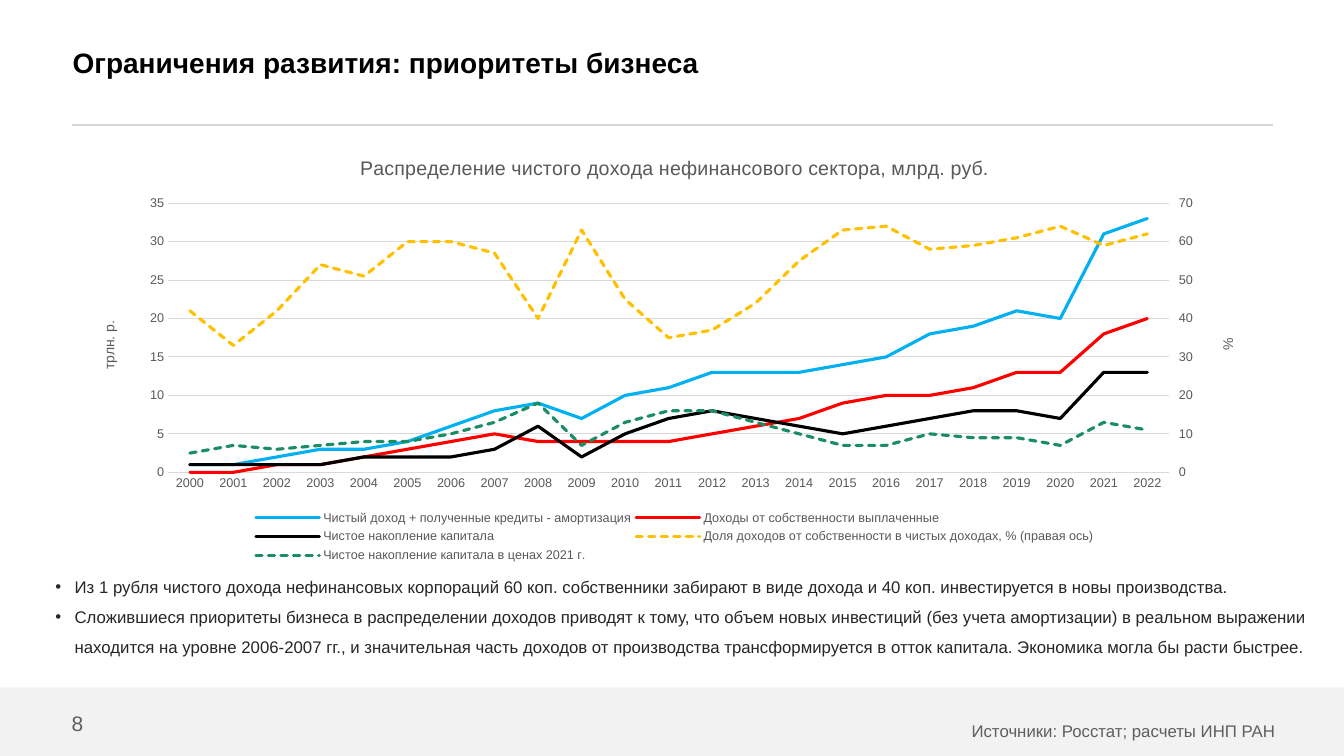
from copy import deepcopy

from lxml import etree
from pptx import Presentation
from pptx.chart import axis as axes, data
from pptx.dml import color
from pptx.enum import chart as charts, dml, shapes, text
from pptx.oxml import ns
from pptx.util import Inches, Pt

FONT = "Arial"
GREY, PALE = "595959", "D9D9D9"
BULLETS = [
    "Из 1 рубля чистого дохода нефинансовых корпораций 60 коп. собственники забирают в виде дохода "
    "и 40 коп. инвестируется в новы производства.",
    "Сложившиеся приоритеты бизнеса в распределении доходов приводят к тому, что объем новых инвестиций "
    "(без учета амортизации) в реальном выражении находится на уровне 2006-2007 гг., и значительная часть "
    "доходов от производства трансформируется в отток капитала. Экономика могла бы расти быстрее.",
]
LEFT_SERIES = [
    ("Чистый доход + полученные кредиты - амортизация", "00B0F0",
     [1, 1, 2, 3, 3, 4, 6, 8, 9, 7, 10, 11, 13, 13, 13, 14, 15, 18, 19, 21, 20, 31, 33]),
    ("Доходы от собственности выплаченные", "FF0000",
     [0, 0, 1, 1, 2, 3, 4, 5, 4, 4, 4, 4, 5, 6, 7, 9, 10, 10, 11, 13, 13, 18, 20]),
    ("Чистое накопление капитала", "000000",
     [1, 1, 1, 1, 2, 2, 2, 3, 6, 2, 5, 7, 8, 7, 6, 5, 6, 7, 8, 8, 7, 13, 13]),
]
RIGHT_SERIES = [
    ("Доля доходов от собственности в чистых доходах, % (правая ось)", "FFC000",
     [42, 33, 42, 54, 51, 60, 60, 57, 40, 63, 45, 35, 37, 44, 55, 63, 64, 58, 59, 61, 64, 59, 62]),
    ("Чистое накопление капитала в ценах 2021 г.", "1B8D64",
     [5, 7, 6, 7, 8, 8, 10, 13, 18, 7, 13, 16, 16, 13, 10, 7, 7, 10, 9, 9, 7, 13, 11]),
]


def rgb(value):
    return color.RGBColor.from_string(value)


def style_font(font, size, shade, bold=False):
    font.name, font.size, font.bold = FONT, Pt(size), bold
    font.color.rgb = rgb(shade)


def add_bullet(para):
    properties = para._p.get_or_add_pPr()
    properties.set("marL", str(Inches(0.19)))
    properties.set("indent", str(-Inches(0.19)))
    etree.SubElement(properties, ns.qn("a:buFont")).set("typeface", FONT)
    etree.SubElement(properties, ns.qn("a:buChar")).set("char", "•")


def add_text(page, place, lines, size, shade, bold=False, align=text.PP_ALIGN.LEFT,
             anchor=text.MSO_ANCHOR.TOP, spacing=1.0, bullet=False, wrap=True):
    frame = page.shapes.add_textbox(*map(Inches, place)).text_frame
    frame.word_wrap, frame.vertical_anchor = wrap, anchor
    frame.margin_left = frame.margin_right = frame.margin_top = frame.margin_bottom = 0
    for index, line in enumerate(lines):
        para = frame.add_paragraph() if index else frame.paragraphs[0]
        if bullet:
            add_bullet(para)
        para.alignment, para.line_spacing = align, spacing
        span = para.add_run()
        span.text = line
        style_font(span.font, size, shade, bold)


def add_rule(page, left, right, top):
    rule = page.shapes.add_connector(shapes.MSO_CONNECTOR.STRAIGHT, *map(Inches, (left, top, right, top)))
    rule.line.color.rgb, rule.line.width = rgb("D5D5D5"), Pt(1.5)
    etree.SubElement(rule._element.spPr, ns.qn("a:effectLst"))


def add_band(page, place, fill):
    band = page.shapes.add_shape(shapes.MSO_SHAPE.RECTANGLE, *map(Inches, place))
    band.shadow.inherit = False
    band.fill.solid()
    band.fill.fore_color.rgb = rgb(fill)
    band.line.fill.background()


def set_layout(element, left, top, width=None, height=None, inner=False):
    for old in element.findall(ns.qn("c:layout")):
        element.remove(old)
    layout = etree.Element(ns.qn("c:layout"))
    manual = etree.SubElement(layout, ns.qn("c:manualLayout"))
    settings = [("layoutTarget", "inner" if inner else None), ("xMode", "edge"), ("yMode", "edge"),
                ("x", left), ("y", top), ("w", width), ("h", height)]
    for tag, value in settings:
        if value is not None:
            etree.SubElement(manual, ns.qn("c:" + tag)).set("val", str(value))
    overlay = element.find(ns.qn("c:overlay"))
    if overlay is None:
        element.insert(0, layout)
    else:
        overlay.addprevious(layout)


def set_title(title, words, size, left, top, upright=True):
    frame = title.text_frame
    span = frame.paragraphs[0].add_run()
    span.text = words
    style_font(span.font, size, GREY)
    if not upright:
        body = next(title._element.iter(ns.qn("a:bodyPr")))
        body.set("rot", "-5400000")
        body.set("vert", "horz")
    set_layout(title._element, left, top)


def style_value_axis(axis, top, step, tick):
    axis.minimum_scale, axis.maximum_scale, axis.major_unit = 0, top, step
    axis.major_tick_mark = tick
    axis.tick_labels.number_format = "0"
    axis.tick_labels.number_format_is_linked = False
    style_font(axis.tick_labels.font, 9, GREY)
    axis.format.line.fill.background()


def style_series(series, shade, dashed):
    series.smooth = False
    series.marker.style = charts.XL_MARKER_STYLE.NONE
    line = series.format.line
    line.color.rgb, line.width = rgb(shade), Pt(2.25)
    if dashed:
        line.dash_style = dml.MSO_LINE.SQUARE_DOT
    next(series._element.iter(ns.qn("a:ln"))).set("cap", "rnd")


def add_right_axis(chart):
    area = chart._chartSpace.chart.plotArea
    left_plot = area.find(ns.qn("c:lineChart"))
    right_plot = deepcopy(left_plot)
    left_plot.addnext(right_plot)
    count = len(LEFT_SERIES)
    for plot, extra in ((left_plot, slice(count, None)), (right_plot, slice(0, count))):
        for series in plot.findall(ns.qn("c:ser"))[extra]:
            plot.remove(series)
    category = deepcopy(area.find(ns.qn("c:catAx")))
    value = deepcopy(area.find(ns.qn("c:valAx")))
    area.find(ns.qn("c:valAx")).addnext(value)
    value.addnext(category)
    renamed = {category.find(ns.qn("c:axId")).get("val"): "5001",
               value.find(ns.qn("c:axId")).get("val"): "5002"}
    for element in (right_plot, category, value):
        for tag in ("c:axId", "c:crossAx"):
            for link in element.findall(ns.qn(tag)):
                link.set("val", renamed[link.get("val")])
    axes.CategoryAxis(category).visible = False
    value.find(ns.qn("c:axPos")).set("val", "r")
    value.find(ns.qn("c:crosses")).set("val", "max")
    right = axes.ValueAxis(value)
    right.has_major_gridlines = False
    style_value_axis(right, 70, 10, charts.XL_TICK_MARK.OUTSIDE)
    return right


def add_income_chart(page):
    source = data.CategoryChartData(number_format="0")
    source.categories = [str(year) for year in range(2000, 2023)]
    for name, shade, values in LEFT_SERIES + RIGHT_SERIES:
        source.add_series(name, values)
    place = map(Inches, (0.85, 1.38, 11.68, 4.24))
    chart = page.shapes.add_chart(charts.XL_CHART_TYPE.LINE, *place, source).chart
    style_font(chart.font, 10, "000000")
    chart.plots[0].vary_by_categories = False
    for index, series in enumerate(chart.plots[0].series):
        shade = (LEFT_SERIES + RIGHT_SERIES)[index][1]
        style_series(series, shade, dashed=index >= len(LEFT_SERIES))

    years, left = chart.category_axis, chart.value_axis
    years.major_tick_mark = charts.XL_TICK_MARK.NONE
    style_font(years.tick_labels.font, 9, GREY)
    style_value_axis(left, 35, 5, charts.XL_TICK_MARK.NONE)
    for line in (years.format.line, left.major_gridlines.format.line):
        line.color.rgb, line.width = rgb(PALE), Pt(0.75)
    right = add_right_axis(chart)

    set_title(left.axis_title, "трлн. р.", 10, 0.01, 0.42, upright=False)
    set_title(right.axis_title, "%", 10, 0.96, 0.46, upright=False)
    chart.has_title = True
    set_title(chart.chart_title, "Распределение чистого дохода нефинансового сектора, млрд. руб.",
              14, 0.23, 0.03)
    set_layout(chart._chartSpace.chart.plotArea, 0.07, 0.15, 0.85, 0.63, inner=True)
    chart.has_legend = True
    chart.legend.position = charts.XL_LEGEND_POSITION.BOTTOM
    chart.legend.include_in_layout = False
    style_font(chart.legend.font, 9, GREY)
    set_layout(chart.legend._element, 0.14, 0.86, 0.72, 0.14)


def main():
    deck = Presentation()
    deck.slide_width, deck.slide_height = Inches(13.33), Inches(7.5)
    page = deck.slides.add_slide(deck.slide_layouts[6])
    middle = text.MSO_ANCHOR.MIDDLE
    add_rule(page, 0.71, 12.63, 1.24)
    add_band(page, (0, 6.82, 13.33, 0.68), "F2F2F2")
    add_text(page, (2.15, 7.05, 10.5, 0.27), ["Источники: Росстат; расчеты ИНП РАН"], 12, "5E5E5E",
             align=text.PP_ALIGN.RIGHT, spacing=1.5)
    add_text(page, (0.71, 7.05, 0.26, 0.25), ["8"], 15, "5E5E5E", anchor=middle, wrap=False)
    add_text(page, (0.72, 0, 10.24, 1.24), ["Ограничения развития: приоритеты бизнеса"], 20, "000000",
             bold=True, anchor=middle)
    add_text(page, (0.55, 5.62, 12.61, 1.01), BULLETS, 12, "262626", spacing=1.5, bullet=True)
    add_income_chart(page)
    deck.save("out.pptx")


if __name__ == "__main__":
    main()
